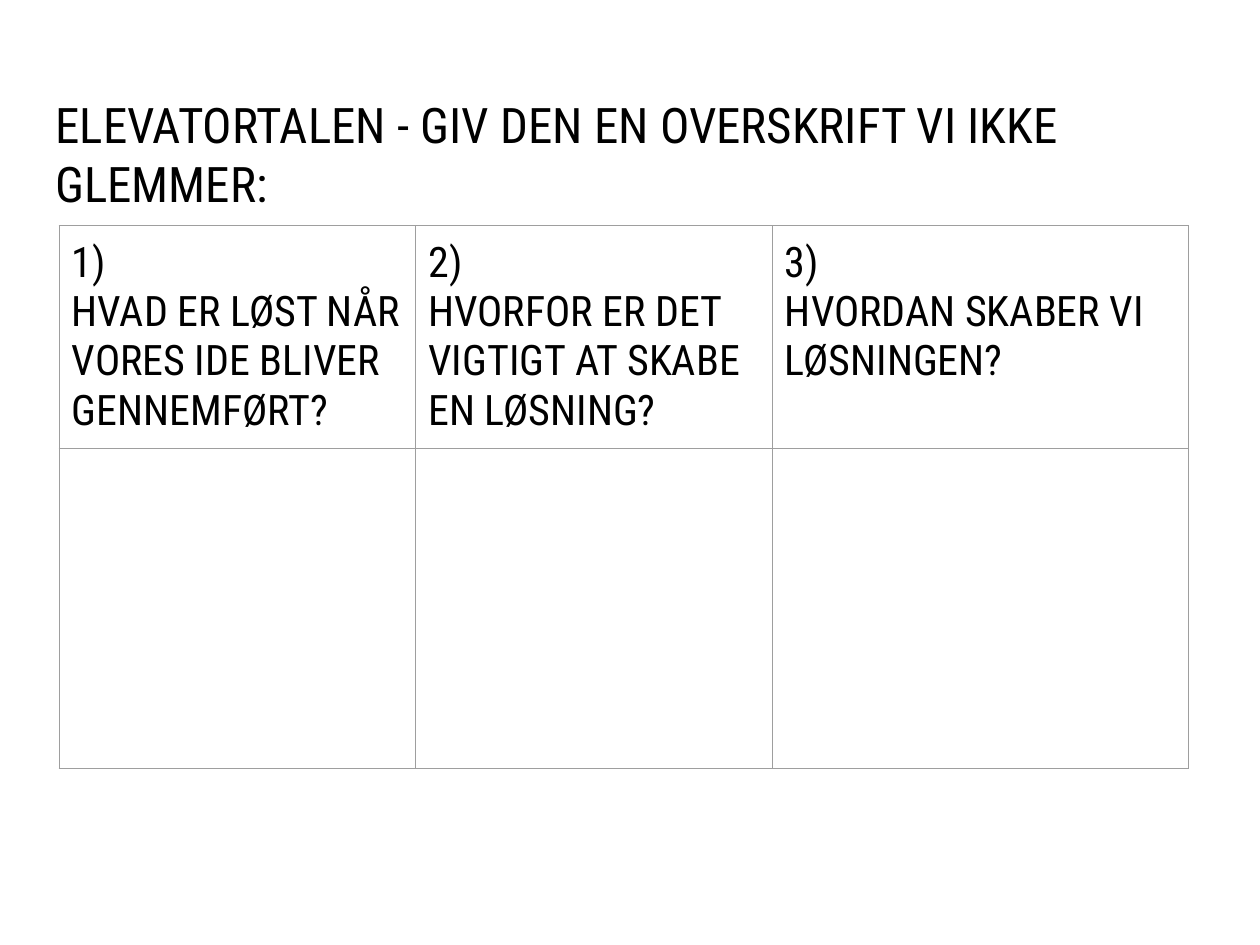
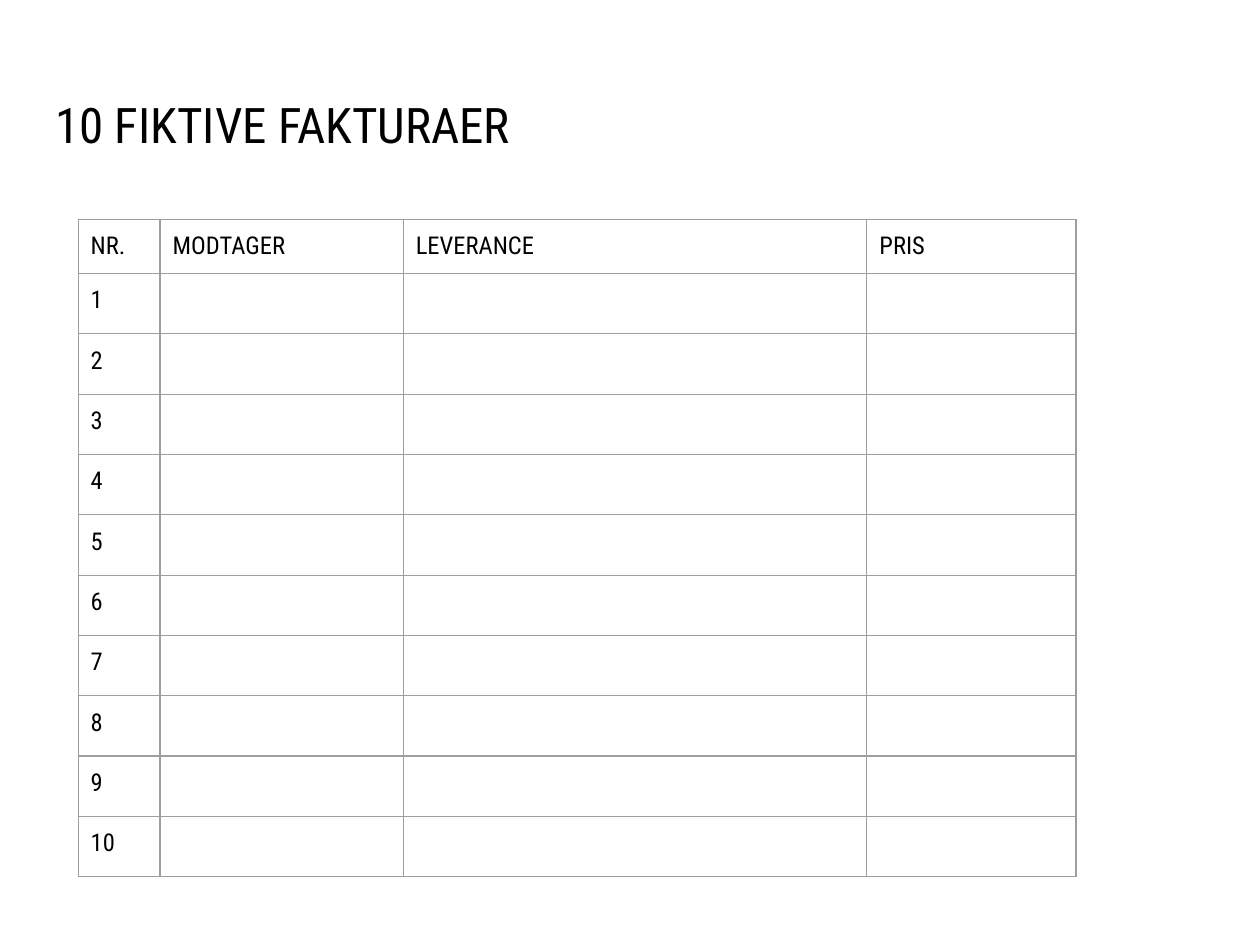
"""Build two worksheet slides: an elevator pitch and a list of invoices."""
from dataclasses import dataclass

from lxml import etree
from pptx import Presentation
from pptx.dml.color import RGBColor
from pptx.enum.text import MSO_ANCHOR, MSO_AUTO_SIZE, PP_ALIGN
from pptx.oxml.ns import qn
from pptx.util import Emu, Inches, Pt

TOP = MSO_ANCHOR.TOP
LEFT = PP_ALIGN.LEFT
NO_FIT = MSO_AUTO_SIZE.NONE

BLACK = RGBColor(0x00, 0x00, 0x00)
GREY = RGBColor(0x9E, 0x9E, 0x9E)
FONT = "Roboto Condensed"
TITLE_SIZE = 28
BORDER_WIDTH = Pt(0.75)

SLIDE_WIDTH, SLIDE_HEIGHT = Inches(10), Inches(7.5)
GRID_COLUMNS, GRID_ROWS = 100, 75
INSET = 1
TITLE_ONLY = 5


@dataclass(frozen=True)
class Sheet:
    """A title above a ruled table, measured in grid columns and rows."""

    title: str
    title_height: float
    left: float
    top: float
    widths: list[float]
    heights: list[float]
    rows: list[list[str]]
    size: int


PITCH = Sheet(
    title="ELEVATORTALEN - GIV DEN EN OVERSKRIFT VI IKKE GLEMMER:",
    title_height=8.3,
    left=4.7,
    top=17.9,
    widths=[28.3, 28.3, 33],
    heights=[17.7, 25.4],
    rows=[
        [
            "1)\nHVAD ER LØST NÅR VORES IDE BLIVER GENNEMFØRT?",
            "2)\nHVORFOR ER DET VIGTIGT AT SKABE EN LØSNING?",
            "3)\nHVORDAN SKABER VI LØSNINGEN?",
        ],
        [""] * 3,
    ],
    size=24,
)

INVOICES = Sheet(
    title="10 FIKTIVE FAKTURAER",
    title_height=12.6,
    left=6.2,
    top=17.4,
    widths=[6.5, 19.3, 36.8, 16.6],
    heights=[4.3] + [4.79] * 10,
    rows=[["NR.", "MODTAGER", "LEVERANCE", "PRIS"]]
    + [[str(number), "", "", ""] for number in range(1, 11)],
    size=14,
)


def across(columns: float) -> Emu:
    """Return the width of a number of grid columns."""
    return Emu(round(SLIDE_WIDTH * columns / GRID_COLUMNS))


def down(rows: float) -> Emu:
    """Return the height of a number of grid rows."""
    return Emu(round(SLIDE_HEIGHT * rows / GRID_ROWS))


def write(frame, text: str, *, size: int, color: RGBColor = BLACK) -> None:
    """Fill a text frame with one left-aligned paragraph per line of text."""
    frame.word_wrap = True
    for index, line in enumerate(text.split("\n")):
        para = frame.add_paragraph() if index else frame.paragraphs[0]
        para.alignment = LEFT
        if not line:
            etree.SubElement(para._p, qn("a:endParaRPr"), sz=str(size * 100))
            continue
        span = para.add_run()
        span.text = line
        span.font.name = FONT
        span.font.size = Pt(size)
        span.font.bold = False
        span.font.color.rgb = color


def inset(box) -> None:
    """Give a cell or a text frame equal margins on all sides."""
    box.margin_left = box.margin_right = across(INSET)
    box.margin_top = box.margin_bottom = down(INSET)
    box.vertical_anchor = TOP


def rule_cell(cell) -> None:
    """Draw a thin grey line on each side of a cell."""
    properties = cell._tc.get_or_add_tcPr()
    for side in ("lnL", "lnR", "lnT", "lnB"):
        line = etree.SubElement(properties, qn(f"a:{side}"), w=str(BORDER_WIDTH))
        fill = etree.SubElement(line, qn("a:solidFill"))
        etree.SubElement(fill, qn("a:srgbClr"), val=str(GREY))


def add_title(page, sheet: Sheet) -> None:
    """Place and format the title placeholder."""
    title = page.shapes.title
    title.left, title.top = across(3.4), down(6.5)
    title.width, title.height = across(93.2), down(sheet.title_height)
    frame = title.text_frame
    inset(frame)
    frame.auto_size = NO_FIT
    write(frame, sheet.title, size=TITLE_SIZE)


def add_ruled_table(page, sheet: Sheet) -> None:
    """Add the unfilled table with its borders and texts."""
    table = page.shapes.add_table(
        len(sheet.heights), len(sheet.widths),
        across(sheet.left), down(sheet.top),
        across(sum(sheet.widths)), down(sum(sheet.heights)),
    ).table
    table.first_row = table.horz_banding = False
    for column, width in zip(table.columns, sheet.widths):
        column.width = across(width)
    for row, height, texts in zip(table.rows, sheet.heights, sheet.rows):
        row.height = down(height)
        for cell, text in zip(row.cells, texts):
            inset(cell)
            rule_cell(cell)
            cell.fill.background()
            write(cell.text_frame, text, size=sheet.size)


def main() -> None:
    """Build and save the deck."""
    deck = Presentation()
    deck.slide_width, deck.slide_height = SLIDE_WIDTH, SLIDE_HEIGHT
    for sheet in (PITCH, INVOICES):
        page = deck.slides.add_slide(deck.slide_layouts[TITLE_ONLY])
        add_title(page, sheet)
        add_ruled_table(page, sheet)
    deck.save("out.pptx")


if __name__ == "__main__":
    main()
